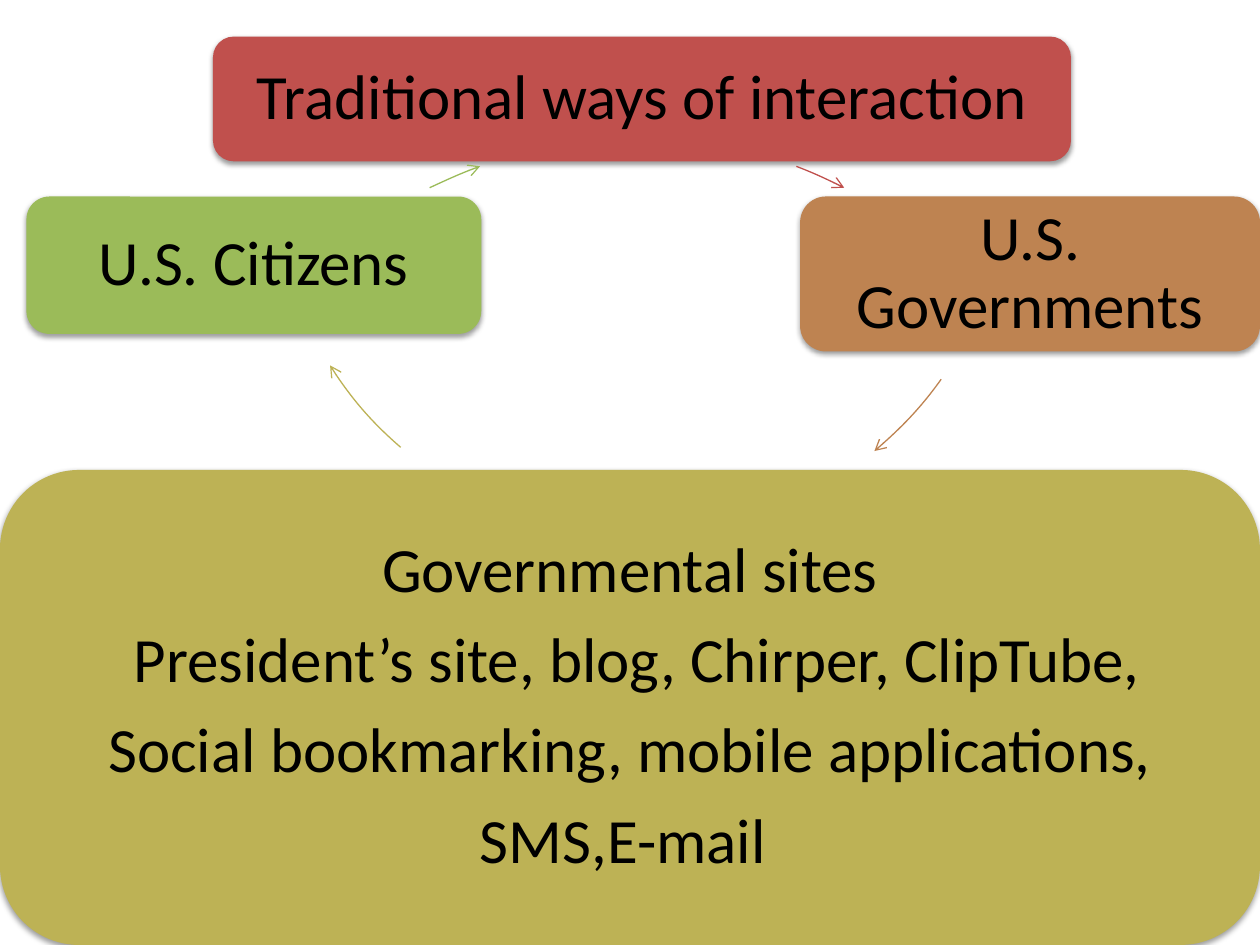
from lxml import etree
from pptx import Presentation
from pptx.dml.color import RGBColor
from pptx.enum import shapes, text
from pptx.oxml import ns
from pptx.util import Inches, Pt

HUES = {"red": "C0504D", "brown": "BE8351", "olive": "BDB255",
        "green": "9BBB59", "ink": "000000"}
FONT = {"name": "Calibri", "size": Pt(36)}
PARA = {"alignment": text.PP_ALIGN.CENTER, "line_spacing": 0.9,
        "space_after": Pt(12.6)}
FRAME = {"word_wrap": True, "vertical_anchor": text.MSO_ANCHOR.MIDDLE,
         **{f"margin_{side}": Inches(0.15)
            for side in ("left", "top", "right", "bottom")}}
RING = 6.25  # side of the square that holds each arc

# Boxes of the cycle: left, top, width, height; hue; lines
NODES = [
    ((1.69, 0.29, 6.81, 0.99), "red", ["Traditional ways of interaction"]),
    ((6.35, 1.56, 3.65, 1.23), "brown", ["U.S. Governments"]),
    ((0, 3.73, 10, 3.77), "olive", [
        "Governmental sites",
        " President’s site, blog, Chirper, ClipTube,",
        "Social bookmarking, mobile applications,",
        "SMS,E-mail "]),
    ((0.21, 1.56, 3.61, 1.09), "green", ["U.S. Citizens"]),
]

# Arrows of the cycle: corner of the square; start, two controls, end; hue
ARCS = [
    ((2.09, 1.12), [(6.32, 1.32), (6.45, 1.37), (6.58, 1.43), (6.7, 1.49)],
     "red"),
    ((1.8, -1.94), [(7.47, 3.01), (7.32, 3.22), (7.14, 3.41), (6.94, 3.58)],
     "brown"),
    ((2.13, -1.91), [(3.18, 3.55), (2.96, 3.36), (2.77, 3.14), (2.62, 2.9)],
     "olive"),
    ((1.71, 1.15), [(3.41, 1.49), (3.54, 1.43), (3.67, 1.37), (3.81, 1.32)],
     "green"),
]


def rgb(hue):
    return RGBColor.from_string(HUES[hue])


def style(item, values):
    for key, value in values.items():
        setattr(item, key, value)


def add_tag(parent, tag, **values):
    return etree.SubElement(parent, ns.qn(tag), values)


def add_shade(shape):
    """Give the shape a soft shadow straight below it."""
    shape.shadow.inherit = False
    effects = shape._element.spPr.find(ns.qn("a:effectLst"))
    shade = add_tag(effects, "a:outerShdw", blurRad=str(Pt(3.1)),
                    dist=str(Pt(1.6)), dir="5400000", rotWithShape="0")
    color = add_tag(shade, "a:srgbClr", val=HUES["ink"])
    add_tag(color, "a:alpha", val="38000")


def add_node(slide, box, hue, lines):
    """Place a rounded box with centred lines of text."""
    node = slide.shapes.add_shape(shapes.MSO_SHAPE.ROUNDED_RECTANGLE,
                                  *map(Inches, box))
    node.fill.solid()
    node.fill.fore_color.rgb = rgb(hue)
    node.line.fill.background()
    add_shade(node)
    frame = node.text_frame
    style(frame, FRAME)
    for i, line in enumerate(lines):
        para = frame.add_paragraph() if i else frame.paragraphs[0]
        style(para, PARA)
        run = para.add_run()
        run.text = line
        style(run.font, FONT)
        run.font.color.rgb = rgb("ink")


def add_curve(shape, knots):
    """Swap the outline for one cubic curve inside the shape's box."""
    route = next(shape._element.iter(ns.qn("a:path")))
    for part in list(route):
        route.remove(part)
    route.set("w", str(shape.width))
    route.set("h", str(shape.height))
    start = add_tag(route, "a:moveTo")
    curve = add_tag(route, "a:cubicBezTo")
    for i, (x, y) in enumerate(knots):
        add_tag(curve if i else start, "a:pt",
                x=str(Inches(x) - shape.left), y=str(Inches(y) - shape.top))


def add_arc(slide, corner, knots, hue):
    """Draw a curved arrow."""
    pen = slide.shapes.build_freeform(*map(Inches, knots[0]))
    pen.add_line_segments([tuple(map(Inches, knots[-1]))], close=False)
    arc = pen.convert_to_shape()
    style(arc, {"left": Inches(corner[0]), "top": Inches(corner[1]),
                "width": Inches(RING), "height": Inches(RING)})
    add_curve(arc, knots)
    arc.shadow.inherit = False
    arc.fill.background()
    arc.line.color.rgb = rgb(hue)
    arc.line.width = Pt(0.75)
    add_tag(arc._element.spPr.find(ns.qn("a:ln")), "a:tailEnd", type="arrow")


def main():
    deck = Presentation()
    deck.slide_width, deck.slide_height = Inches(10), Inches(7.5)
    slide = deck.slides.add_slide(deck.slide_layouts[6])
    for node, arc in zip(NODES, ARCS):
        add_node(slide, *node)
        add_arc(slide, *arc)
    deck.save("out.pptx")


if __name__ == "__main__":
    main()
